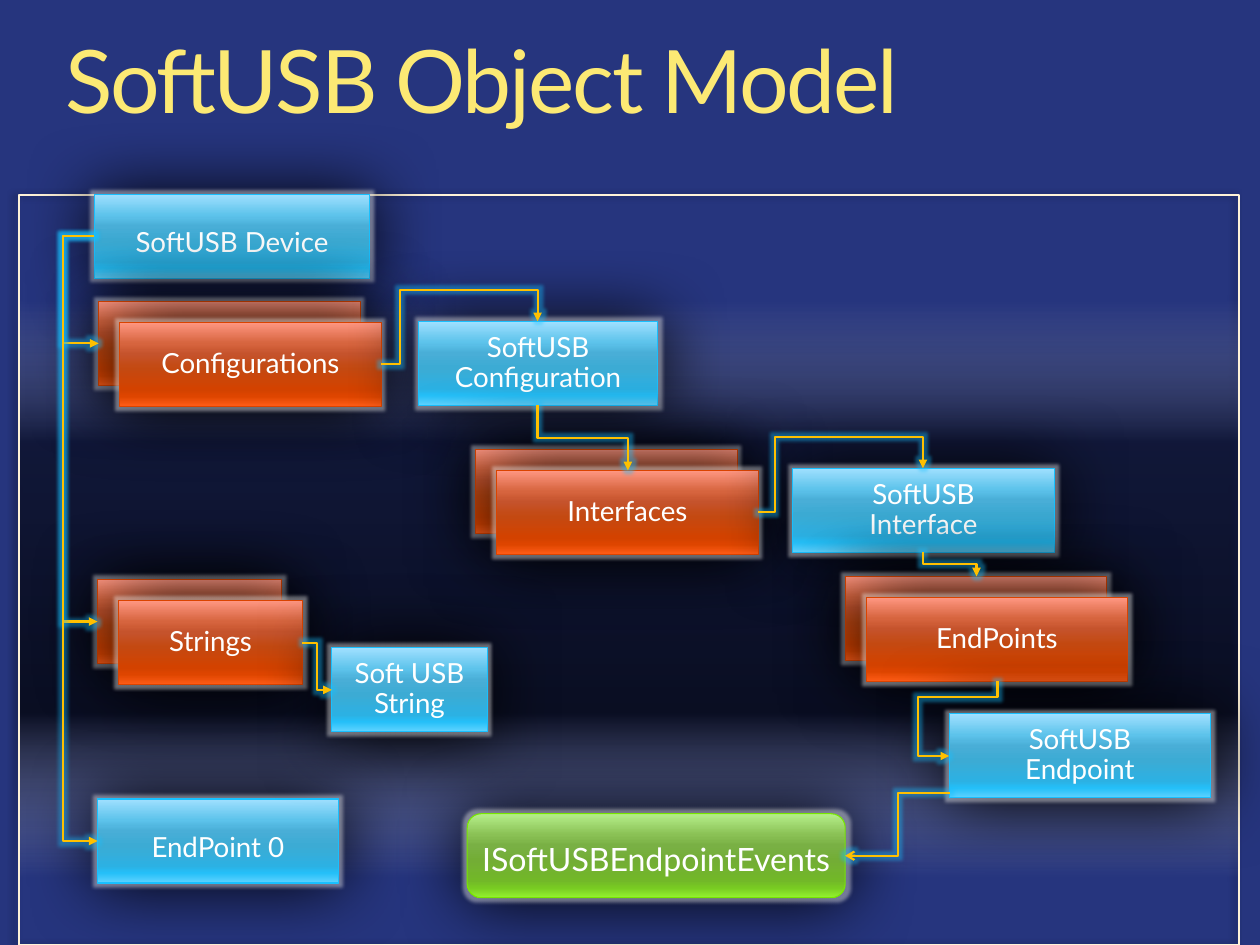
import pptx
import pptx.util
import pptx.dml.color
import pptx.enum.shapes
import pptx.enum.text
import pptx.oxml.ns
import lxml.etree

Inches = pptx.util.Inches
Pt = pptx.util.Pt
RGB = pptx.dml.color.RGBColor
SHAPE = pptx.enum.shapes.MSO_SHAPE
ELBOW = pptx.enum.shapes.MSO_CONNECTOR.ELBOW
ALIGN = pptx.enum.text.PP_ALIGN
ANCHOR = pptx.enum.text.MSO_ANCHOR
qn = pptx.oxml.ns.qn
sub = lxml.etree.SubElement

NAVY = RGB(0x26, 0x35, 0x7E)
WHITE = RGB(0xFF, 0xFF, 0xFF)
BLACK = RGB(0x00, 0x00, 0x00)
CREAM = RGB(0xFF, 0xF3, 0xD8)
YELLOW = RGB(0xFC, 0xE9, 0x74)
GOLD = RGB(0xFF, 0xC0, 0x00)
BLUE_LINE = RGB(0x18, 0xC0, 0xFF)
RED_LINE = RGB(0xDA, 0x44, 0x00)
GREEN_LINE = RGB(0x77, 0xE7, 0x00)
BLUES = [RGB(0xA0, 0xE0, 0xFF), RGB(0x5D, 0xC3, 0xEB), RGB(0x49, 0xAE, 0xD7),
         RGB(0x3C, 0xAB, 0xD4), RGB(0x2C, 0xB1, 0xE3), RGB(0x24, 0xBF, 0xF8),
         RGB(0x5F, 0xD3, 0xFF)]
REDS = [RGB(0xFF, 0x97, 0x82), RGB(0xD6, 0x64, 0x3E), RGB(0xC5, 0x53, 0x2C),
        RGB(0xC4, 0x49, 0x11), RGB(0xD3, 0x42, 0x00), RGB(0xDE, 0x45, 0x00),
        RGB(0xFF, 0x5C, 0x16)]
GREENS = [RGB(0xB6, 0xEF, 0x8B), RGB(0x8A, 0xC1, 0x55), RGB(0x79, 0xB0, 0x44),
          RGB(0x73, 0xAD, 0x35), RGB(0x72, 0xB8, 0x28), RGB(0x78, 0xCA, 0x22),
          RGB(0x94, 0xF3, 0x2F)]
STOPS = [0, 25, 38, 55, 80, 88, 100]
PALETTES = {"blue": (BLUES, BLUE_LINE), "red": (REDS, RED_LINE),
            "green": (GREENS, GREEN_LINE)}
FONT = "Lato"


def set_gradient(sp, stops, angle):
    sp.fill.gradient()
    sp.fill.gradient_angle = angle
    gs_list = sp._element.spPr.find(".//" + qn("a:gsLst"))
    gs_list.clear()
    for pos, color, alpha in stops:
        gs = sub(gs_list, qn("a:gs"), pos=str(pos * 1000))
        clr = sub(gs, qn("a:srgbClr"), val=str(color))
        if alpha < 100:
            sub(clr, qn("a:alpha"), val=str(alpha * 1000))


def add_effects(sp, glow=None, shadow=None):
    effects = sub(sp._element.spPr, qn("a:effectLst"))
    if glow:
        color, alpha, radius = glow
        el = sub(effects, qn("a:glow"), rad=str(Pt(radius)))
        clr = sub(el, qn("a:srgbClr"), val=str(color))
        sub(clr, qn("a:alpha"), val=str(alpha * 1000))
    if shadow:
        alpha, blur, dist, angle = shadow
        el = sub(effects, qn("a:outerShdw"), blurRad=str(Pt(blur)),
                 dist=str(Pt(dist)), dir=str(angle * 60000), rotWithShape="0")
        clr = sub(el, qn("a:srgbClr"), val=str(BLACK))
        sub(clr, qn("a:alpha"), val=str(alpha * 1000))


prs = pptx.Presentation()
prs.slide_width, prs.slide_height = Inches(12), Inches(9)
s = prs.slides.add_slide(prs.slide_layouts[6])
s.background.fill.solid()
s.background.fill.fore_color.rgb = NAVY

panel = s.shapes.add_shape(SHAPE.RECTANGLE, Inches(0.18), Inches(1.86),
                           Inches(11.62), Inches(7.14))
set_gradient(panel, [(9, WHITE, 0), (31, BLACK, 63), (67, BLACK, 44), (86, WHITE, 0)], 90)
panel.line.color.rgb = CREAM
panel.line.width = Pt(1.25)
add_effects(panel, shadow=(40, 4, 3, 180))

title = s.shapes.add_textbox(Inches(0.5), Inches(0.3), Inches(11), Inches(0.91))
tf = title.text_frame
tf.word_wrap = True
tf.margin_left = tf.margin_right = Inches(0.12)
tf.margin_top = tf.margin_bottom = Inches(0.06)
p = tf.paragraphs[0]
p.line_spacing = 0.9
r = p.add_run()
r.text = "SoftUSB Object Model"
r.font.size = Pt(60)
r.font.name = FONT
r.font.color.rgb = YELLOW
r._r.get_or_add_rPr().set("spc", "-150")

CARD_H, STACK = 0.8, 0.2
cards = [
    ("SoftUSB Device", 0.9, 1.85, 2.62, "blue", 0.2),
    ("Configurations", 1.14, 3.07, 2.49, "red", 0.06),
    ("Strings", 1.13, 5.72, 1.75, "red", 0.06),
    ("EndPoint 0", 0.93, 7.61, 2.29, "blue", 0.2),
    ("SoftUSB\nConfiguration", 3.99, 3.06, 2.27, "blue", 0.06),
    ("Soft USB\nString", 3.16, 6.17, 1.48, "blue", 0.06),
    ("Interfaces", 4.73, 4.48, 2.49, "red", 0.06),
    ("SoftUSB\nInterface", 7.55, 4.46, 2.49, "blue", 0.06),
    ("EndPoints", 8.25, 5.69, 2.49, "red", 0.06),
    ("SoftUSB\nEndpoint", 9.04, 6.8, 2.49, "blue", 0.06),
    ("ISoftUSBEndpointEvents", 4.45, 7.75, 3.6, "green", 0.16),
]
for text, x, y, w, tone, top in cards:
    colors, edge = PALETTES[tone]
    layers = [(STACK, ""), (0, text)] if tone == "red" else [(0, text)]
    preset = SHAPE.ROUNDED_RECTANGLE if tone == "green" else SHAPE.FLOWCHART_PROCESS
    for shift, label in layers:
        sp = s.shapes.add_shape(preset, Inches(x - shift), Inches(y - shift),
                                Inches(w), Inches(CARD_H))
        set_gradient(sp, [(pos, c, 100) for pos, c in zip(STOPS, colors)], 270)
        sp.line.color.rgb = edge
        sp.line.width = Pt(0.75)
        add_effects(sp, (WHITE, 40, 5), (100, 50, 0, 0))
        if not label:
            continue
        tf = sp.text_frame
        tf.word_wrap = tone != "green"
        tf.vertical_anchor = ANCHOR.MIDDLE
        tf.margin_left = tf.margin_right = Inches(0.12)
        tf.margin_top, tf.margin_bottom = Inches(top), Inches(0.06)
        p = tf.paragraphs[0]
        p.text = label
        p.alignment = ALIGN.CENTER
        p.line_spacing = 0.9
        p.font.size = Pt(22 if tone == "green" else 19)
        p.font.name = FONT
        p.font.color.rgb = WHITE

arrows = [
    ("across", (0.9, 2.25), (0.94, 3.27), [0.6]),
    ("across", (0.9, 2.25), (0.93, 5.92), [0.6]),
    ("across", (0.9, 2.25), (0.93, 8.01), [0.6]),
    ("across", (2.88, 6.12), (3.16, 6.57), [3.02]),
    ("across", (3.63, 3.47), (5.12, 3.06), [3.81, 2.76]),
    ("down", (5.12, 3.86), (5.98, 4.48), [4.17]),
    ("across", (7.22, 4.88), (8.79, 4.46), [7.38, 4.16]),
    ("down", (9.5, 6.49), (9.04, 7.2), [6.64, 8.74]),
    ("down", (8.79, 5.26), (9.3, 5.49), [5.37]),
    ("across", (9.05, 7.55), (8.05, 8.15), [8.55]),
]
for heading, start, end, bends in arrows:
    (x0, y0), (x1, y1) = start, end
    axes = [0, 1]
    turn = 0
    if heading == "down":
        axes = [1, 0]
        turn = 270 if x1 > x0 else 90
        sign = 1 if turn == 90 else -1
        cx, cy = (x0 + x1) / 2, (y0 + y1) / 2
        x0, y0, x1, y1 = (cx + sign * (y0 - cy), cy - sign * (x0 - cx),
                          cx + sign * (y1 - cy), cy - sign * (x1 - cx))
    cn = s.shapes.add_connector(ELBOW, Inches(x0), Inches(y0), Inches(x1), Inches(y1))
    spPr = cn._element.spPr
    if turn:
        spPr.find(qn("a:xfrm")).set("rot", str(turn * 60000))
    geom = spPr.find(qn("a:prstGeom"))
    geom.set("prst", f"bentConnector{len(bends) + 2}")
    guides = geom.find(qn("a:avLst"))
    for i, (axis, bend) in enumerate(zip(axes, bends), 1):
        ratio = (bend - start[axis]) / (end[axis] - start[axis])
        sub(guides, qn("a:gd"), name=f"adj{i}", fmla=f"val {round(ratio * 100000)}")
    cn.line.color.rgb = GOLD
    cn.line.width = Pt(1.5)
    head = "arrow" if end == (8.05, 8.15) else "triangle"
    sub(cn.line._get_or_add_ln(), qn("a:tailEnd"), type=head)
    add_effects(cn, glow=(BLUE_LINE, 40, 5))

prs.save("out.pptx")
